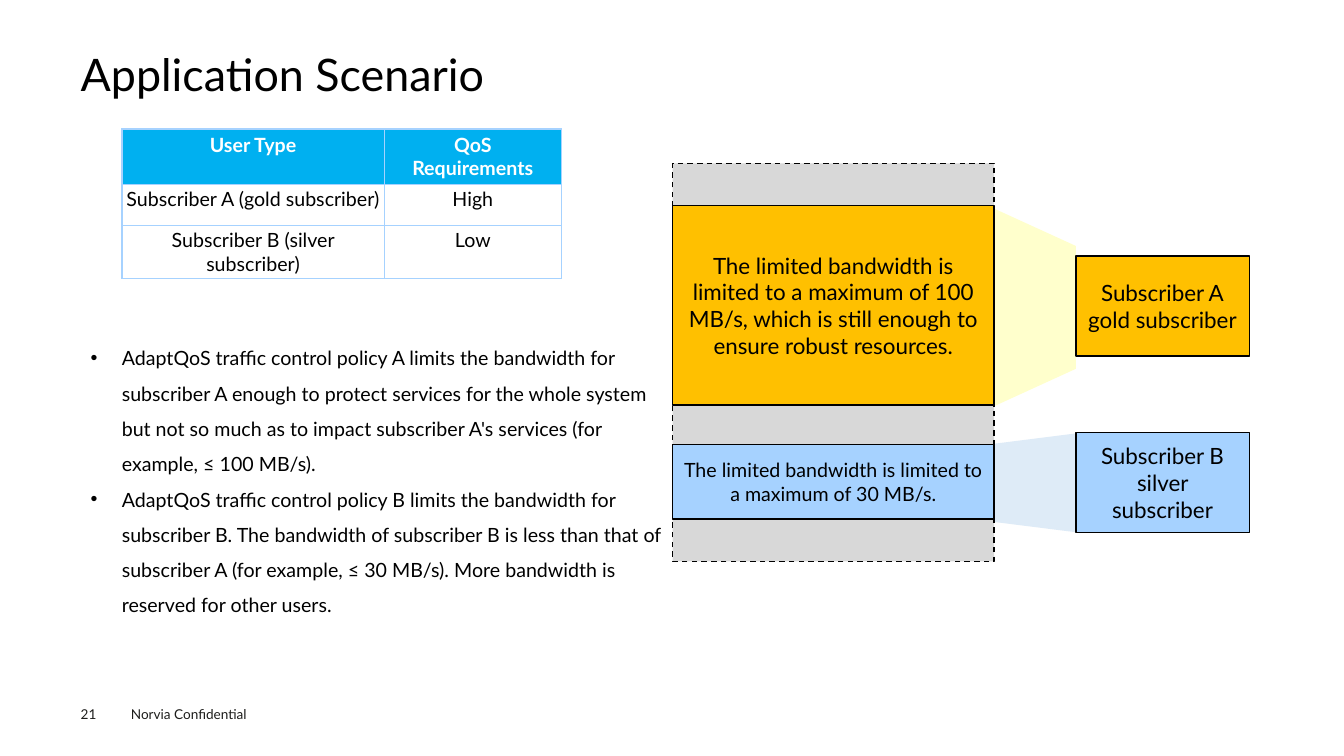
from lxml import etree
from pptx import Presentation
from pptx.dml.color import RGBColor
from pptx.enum.dml import MSO_LINE
from pptx.enum.shapes import MSO_SHAPE
from pptx.enum.text import MSO_ANCHOR, PP_ALIGN
from pptx.oxml.ns import qn
from pptx.util import Inches, Pt

RECTANGLE, TRAPEZOID = MSO_SHAPE.RECTANGLE, MSO_SHAPE.TRAPEZOID
CENTER, LEFT = PP_ALIGN.CENTER, PP_ALIGN.LEFT
TOP, MIDDLE = MSO_ANCHOR.TOP, MSO_ANCHOR.MIDDLE
DASH = MSO_LINE.DASH

FONT = "Lato"
BLACK = RGBColor(0x00, 0x00, 0x00)
WHITE = RGBColor(0xFF, 0xFF, 0xFF)
INK = RGBColor(0x1D, 0x1D, 0x1B)
HEADER_BLUE = RGBColor(0x00, 0xB0, 0xF0)
SILVER_BLUE = RGBColor(0xA6, 0xD2, 0xFF)
PALE_BLUE = RGBColor(0xDE, 0xEB, 0xF7)
GOLD = RGBColor(0xFF, 0xC0, 0x00)
PALE_GOLD = RGBColor(0xFF, 0xFF, 0xCC)
GREY = RGBColor(0xD8, 0xD8, 0xD8)

TITLE = "Application Scenario"
PAGE_NUMBER = "21"
FOOTER = "Norvia Confidential"
QOS_ROWS = [
    ("User Type", "QoS Requirements"),
    ("Subscriber A (gold subscriber)", "High"),
    ("Subscriber B (silver subscriber)", "Low"),
]
QOS_COLUMNS = (2.6, 1.76)
QOS_ROW_HEIGHT = 0.41
POLICIES = [
    "AdaptQoS traffic control policy A limits the bandwidth for subscriber A "
    "enough to protect services for the whole system but not so much as to "
    "impact subscriber A's services (for example, ≤ 100 MB/s).",
    "AdaptQoS traffic control policy B limits the bandwidth for subscriber B. "
    "The bandwidth of subscriber B is less than that of subscriber A (for "
    "example, ≤ 30 MB/s). More bandwidth is reserved for other users.",
]
SUBSCRIBERS = [
    dict(
        limit="The limited bandwidth is limited to a maximum of 30 MB/s.",
        limit_size=14, limit_top=4.41, limit_height=0.74,
        label=["Subscriber B", "silver subscriber"], label_top=4.29,
        color=SILVER_BLUE, beam_color=PALE_BLUE,
        beam_middle=4.79, beam_span=0.98, beam_slope=0.126, beam_turn=270,
    ),
    dict(
        limit="The limited bandwidth is limited to a maximum of 100 MB/s, "
              "which is still enough to ensure robust resources.",
        limit_size=16, limit_top=2.04, limit_height=1.98,
        label=["Subscriber A", "gold subscriber"], label_top=2.54,
        color=GOLD, beam_color=PALE_GOLD,
        beam_middle=3.05, beam_span=1.96, beam_slope=0.457, beam_turn=90,
    ),
]
POOL_LEFT, POOL_TOP, POOL_WIDTH, POOL_HEIGHT = 6.67, 1.62, 3.19, 3.95
LABEL_LEFT, LABEL_WIDTH, LABEL_HEIGHT = 10.67, 1.72, 0.99


def write(frame, lines, size, color=BLACK, align=LEFT, anchor=TOP,
          bold=False, spacing=None, bullet=None):
    frame.word_wrap = True
    frame.vertical_anchor = anchor
    for number, line in enumerate(lines):
        paragraph = frame.add_paragraph() if number else frame.paragraphs[0]
        paragraph.alignment = align
        if spacing:
            paragraph.line_spacing = spacing
        if bullet:
            properties = paragraph._p.get_or_add_pPr()
            properties.set("marL", str(Inches(0.31)))
            properties.set("indent", str(Inches(-0.31)))
            etree.SubElement(properties, qn("a:buFont")).set("typeface", "Arial")
            etree.SubElement(properties, qn("a:buChar")).set("char", bullet)
        run = paragraph.add_run()
        run.text = line
        run.font.name = FONT
        run.font.size = Pt(size)
        run.font.bold = bold
        run.font.color.rgb = color


def add_text(slide, box, lines, size, inset=True, **style):
    frame = slide.shapes.add_textbox(*map(Inches, box)).text_frame
    if not inset:
        frame.margin_left = frame.margin_right = 0
        frame.margin_top = frame.margin_bottom = 0
    write(frame, lines, size, **style)


def add_block(slide, kind, box, fill, outlined=True):
    block = slide.shapes.add_shape(kind, *map(Inches, box))
    block.shadow.inherit = False
    block.fill.solid()
    block.fill.fore_color.rgb = fill
    if outlined:
        block.line.color.rgb = BLACK
        block.line.width = Pt(1)
    else:
        block.line.fill.background()
    return block


def add_borders(cell, color):
    properties = cell._tc.get_or_add_tcPr()
    for position, side in enumerate(("a:lnL", "a:lnR", "a:lnT", "a:lnB")):
        border = etree.Element(qn(side), w=str(Pt(1)))
        fill = etree.SubElement(border, qn("a:solidFill"))
        etree.SubElement(fill, qn("a:srgbClr")).set("val", str(color))
        properties.insert(position, border)


def add_qos_table(slide):
    table = slide.shapes.add_table(
        len(QOS_ROWS), len(QOS_COLUMNS), Inches(1.21), Inches(1.28),
        Inches(sum(QOS_COLUMNS)), Inches(QOS_ROW_HEIGHT * len(QOS_ROWS))).table
    table.horz_banding = False
    for column, width in zip(table.columns, QOS_COLUMNS):
        column.width = Inches(width)
    for row_number, texts in enumerate(QOS_ROWS):
        header = row_number == 0
        table.rows[row_number].height = Inches(QOS_ROW_HEIGHT)
        for column_number, text in enumerate(texts):
            cell = table.cell(row_number, column_number)
            side, edge = (0.09, 0.04) if header else (0.03, 0.03)
            cell.margin_left = cell.margin_right = Inches(side)
            cell.margin_top = cell.margin_bottom = Inches(edge)
            if header:
                cell.fill.solid()
                cell.fill.fore_color.rgb = HEADER_BLUE
            else:
                cell.fill.background()
            add_borders(cell, SILVER_BLUE)
            write(cell.text_frame, [text], 14, WHITE if header else BLACK,
                  align=CENTER, bold=header)


def add_beam(slide, subscriber):
    start = POOL_LEFT + POOL_WIDTH
    length, span = LABEL_LEFT - start, subscriber["beam_span"]
    box = ((start + LABEL_LEFT - span) / 2,
           subscriber["beam_middle"] - length / 2, span, length)
    beam = add_block(slide, TRAPEZOID, box, subscriber["beam_color"], outlined=False)
    beam.adjustments[0] = subscriber["beam_slope"]
    beam.rotation = subscriber["beam_turn"]


def add_bandwidth_diagram(slide):
    for subscriber in SUBSCRIBERS:
        add_beam(slide, subscriber)
    pool = add_block(slide, RECTANGLE,
                     (POOL_LEFT, POOL_TOP, POOL_WIDTH, POOL_HEIGHT), GREY)
    pool.line.dash_style = DASH
    for subscriber in SUBSCRIBERS:
        limit_box = (POOL_LEFT, subscriber["limit_top"],
                     POOL_WIDTH, subscriber["limit_height"])
        label_box = (LABEL_LEFT, subscriber["label_top"], LABEL_WIDTH, LABEL_HEIGHT)
        for box, lines, size in (
                (limit_box, [subscriber["limit"]], subscriber["limit_size"]),
                (label_box, subscriber["label"], 16)):
            block = add_block(slide, RECTANGLE, box, subscriber["color"])
            write(block.text_frame, lines, size, align=CENTER, anchor=MIDDLE)


def main():
    deck = Presentation()
    deck.slide_width, deck.slide_height = Inches(13.33), Inches(7.5)
    slide = deck.slides.add_slide(deck.slide_layouts[6])
    add_text(slide, (1.2, 6.95, 1.6, 0.27), [FOOTER], 9.7, color=INK)
    add_text(slide, (0.8, 7, 0.55, 0.16), [PAGE_NUMBER], 9.7, inset=False, color=INK)
    add_text(slide, (0.8, 0.49, 11.73, 0.54), [TITLE], 32, inset=False,
             anchor=MIDDLE, spacing=0.9)
    add_qos_table(slide)
    add_text(slide, (0.8, 3.27, 5.97, 2.93), POLICIES, 14, spacing=1.5, bullet="•")
    add_bandwidth_diagram(slide)
    deck.save("out.pptx")


if __name__ == "__main__":
    main()
